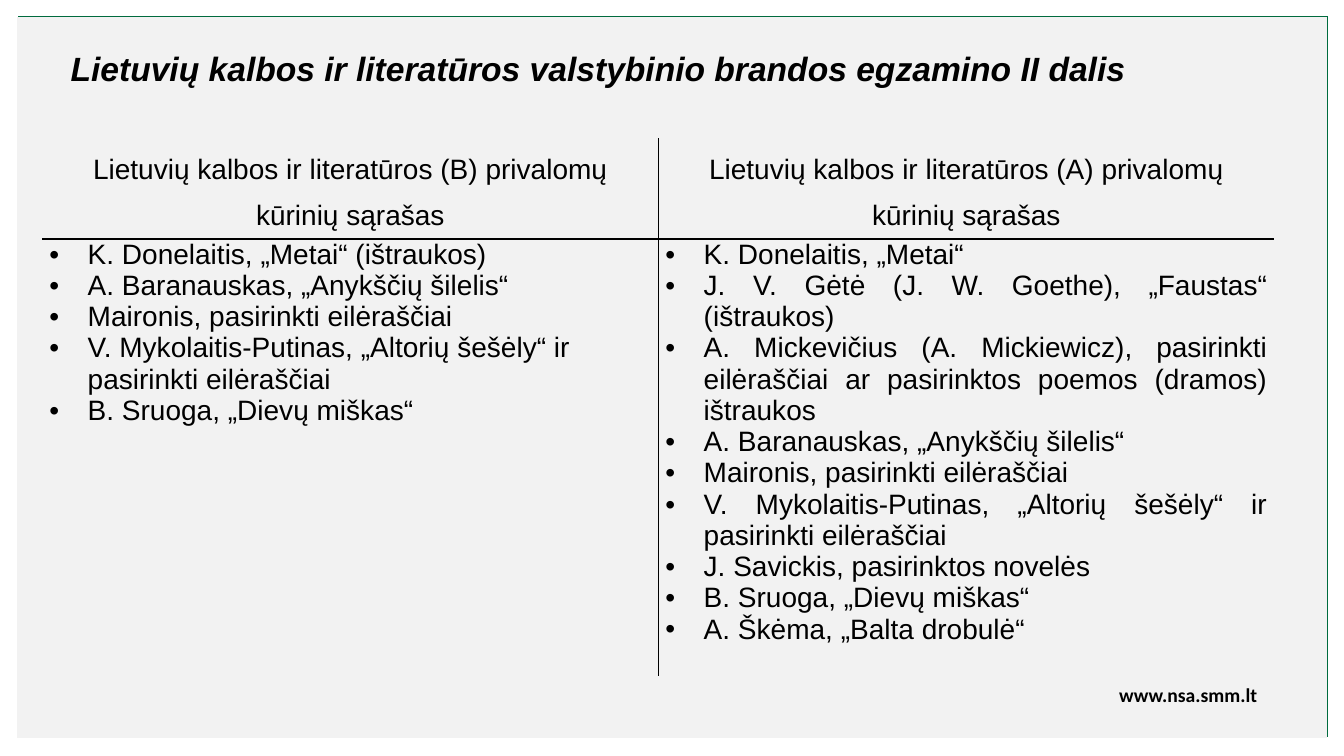
from lxml.etree import SubElement
from pptx import Presentation
from pptx.dml.color import RGBColor
from pptx.enum.shapes import MSO_SHAPE
from pptx.enum.text import MSO_ANCHOR, MSO_AUTO_SIZE, PP_ALIGN
from pptx.oxml.ns import qn
from pptx.util import Inches, Pt

COLORS = {"green": "006B3E", "panel": "F2F2F2", "ink": "000000"}
NO_STYLE_NO_GRID = "{2D5ABB26-0587-4C30-8999-92F81FD0307C}"
INDENT = Inches(0.38)

HEADINGS = [
    "Lietuvių kalbos ir literatūros (B) privalomų kūrinių sąrašas",
    "Lietuvių kalbos ir literatūros (A) privalomų kūrinių sąrašas",
]
READING_LISTS = [
    [
        "K. Donelaitis, „Metai“ (ištraukos)",
        "A. Baranauskas, „Anykščių šilelis“",
        "Maironis, pasirinkti eilėraščiai",
        "V. Mykolaitis-Putinas, „Altorių šešėly“ ir pasirinkti eilėraščiai",
        "B. Sruoga, „Dievų miškas“",
    ],
    [
        "K. Donelaitis, „Metai“",
        "J. V. Gėtė (J. W. Goethe), „Faustas“ (ištraukos)",
        "A. Mickevičius (A. Mickiewicz), pasirinkti eilėraščiai ar "
        "pasirinktos poemos (dramos) ištraukos",
        "A. Baranauskas, „Anykščių šilelis“",
        "Maironis, pasirinkti eilėraščiai",
        "V. Mykolaitis-Putinas, „Altorių šešėly“ ir pasirinkti eilėraščiai",
        "J. Savickis, pasirinktos novelės",
        "B. Sruoga, „Dievų miškas“",
        "A. Škėma, „Balta drobulė“",
    ],
]


def style_font(paragraph, size, name="Arial", bold=False, italic=False):
    font = paragraph.font
    font.size, font.name, font.bold, font.italic = Pt(size), name, bold, italic
    font.color.rgb = RGBColor.from_string(COLORS["ink"])


def add_border(cell, side):
    """Draw a 1 pt line on one side of a cell: lnL, lnR, lnT or lnB."""
    properties = cell._tc.get_or_add_tcPr()
    line = SubElement(properties, qn(f"a:{side}"), w=str(Pt(1)))
    fill = SubElement(line, qn("a:solidFill"))
    SubElement(fill, qn("a:srgbClr"), val=COLORS["ink"])


presentation = Presentation()
presentation.slide_width = Inches(13.33)
presentation.slide_height = Inches(7.5)
slide = presentation.slides.add_slide(presentation.slide_layouts[5])

# Panel with a thin green edge along its top and right
for left, top, color in [(0.18, 0.16, "green"), (0.17, 0.17, "panel")]:
    panel = slide.shapes.add_shape(
        MSO_SHAPE.RECTANGLE, Inches(left), Inches(top), Inches(12.99), Inches(7.15))
    panel.shadow.inherit = False
    panel.fill.solid()
    panel.fill.fore_color.rgb = RGBColor.from_string(COLORS[color])
    panel.line.fill.background()

# Web address
address = slide.shapes.add_textbox(
    Inches(9.37), Inches(6.73), Inches(3.2), Inches(0.34))
address.text_frame.word_wrap = True
paragraph = address.text_frame.paragraphs[0]
paragraph.text = "www.nsa.smm.lt"
paragraph.alignment = PP_ALIGN.RIGHT
style_font(paragraph, 14, "Calibri", bold=True)

# Two reading lists under their headings
frame = slide.shapes.add_table(
    2, 2, Inches(0.42), Inches(1.37), Inches(12.22), Inches(5.33))
table = frame.table
table.first_row = table.horz_banding = False
table._tbl.tblPr.find(qn("a:tableStyleId")).text = NO_STYLE_NO_GRID
table.rows[0].height, table.rows[1].height = Inches(1), Inches(4.33)

inner_sides = {
    (0, 0): ("lnR", "lnB"), (0, 1): ("lnL", "lnB"),
    (1, 0): ("lnR", "lnT"), (1, 1): ("lnL", "lnT"),
}
for (row, column), sides in inner_sides.items():
    cell = table.cell(row, column)
    for side in sides:
        add_border(cell, side)
    cell.fill.background()
    cell.margin_left = cell.margin_right = Inches(0.07)
    cell.margin_top = cell.margin_bottom = 0

for column, (heading, works) in enumerate(zip(HEADINGS, READING_LISTS)):
    paragraph = table.cell(0, column).text_frame.paragraphs[0]
    paragraph.text = heading
    paragraph.alignment = PP_ALIGN.CENTER
    paragraph.line_spacing = 1.5
    style_font(paragraph, 20)

    text_frame = table.cell(1, column).text_frame
    text_frame.text = "\n".join(works)
    for paragraph in text_frame.paragraphs:
        paragraph.alignment = (PP_ALIGN.LEFT, PP_ALIGN.JUSTIFY)[column]
        properties = paragraph._p.get_or_add_pPr()
        properties.set("marL", str(INDENT))
        properties.set("indent", str(-INDENT))
        SubElement(properties, qn("a:buFont"), typeface="Arial")
        SubElement(properties, qn("a:buChar"), char="•")
        style_font(paragraph, 20)

# Title, brought in front of the panel
title = slide.shapes.title
title.left, title.top = Inches(0.6), Inches(0.43)
title.width, title.height = Inches(11.12), Inches(0.5)
title.text_frame.auto_size = MSO_AUTO_SIZE.NONE
title.text_frame.vertical_anchor = MSO_ANCHOR.MIDDLE
paragraph = title.text_frame.paragraphs[0]
paragraph.text = "Lietuvių kalbos ir literatūros valstybinio brandos egzamino II dalis"
paragraph.alignment = PP_ALIGN.LEFT
style_font(paragraph, 24, bold=True, italic=True)
slide.shapes._spTree.append(title._element)

presentation.save("out.pptx")
